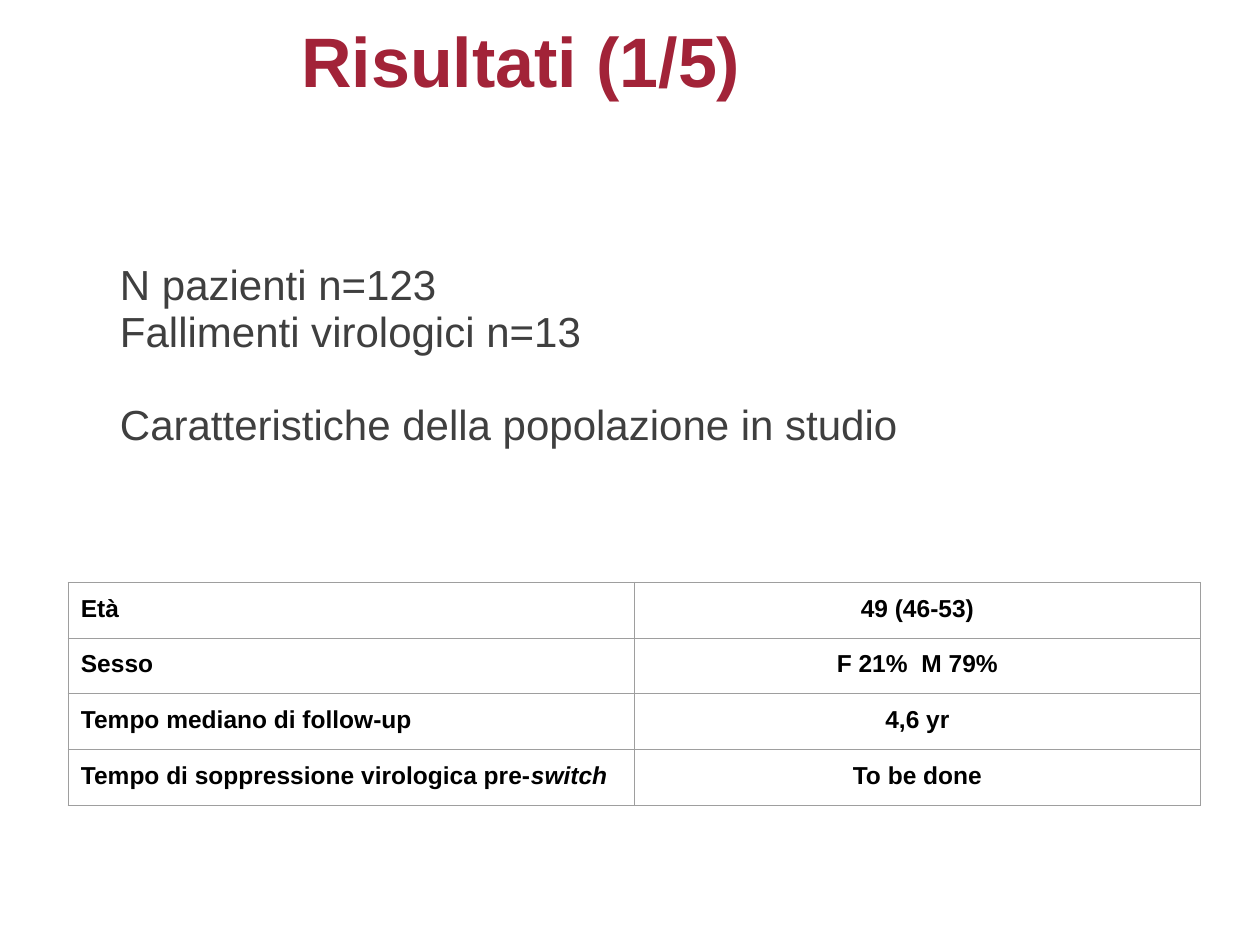
from lxml import etree
from pptx import Presentation
from pptx import util as u
from pptx.dml.color import RGBColor
from pptx.enum import text as t
from pptx.oxml import ns

CRIMSON = RGBColor(0xA2, 0x23, 0x38)
CHARCOAL = RGBColor(0x3F, 0x3F, 0x3F)
BLACK = RGBColor(0x00, 0x00, 0x00)
GREY = RGBColor(0x9E, 0x9E, 0x9E)
FONT = "Arial"
INSET = u.Pt(7.2)


def write(para, text, size=14, color=BLACK, bold=False, italic=False):
    """Add one formatted span of text to a paragraph."""
    span = para.add_run()
    span.text = text
    font = span.font
    font.name, font.size = FONT, u.Pt(size)
    font.bold, font.italic = bold, italic
    font.color.rgb = color


class SlideBuilder:
    """Holds the current slide and the style of its elements."""

    def __init__(self, page):
        self.page = page

    def place(self, box, left, top, width, height):
        box.left, box.top = u.Pt(left), u.Pt(top)
        box.width, box.height = u.Pt(width), u.Pt(height)
        frame = box.text_frame
        frame.word_wrap = True
        frame.auto_size = t.MSO_AUTO_SIZE.NONE
        frame.vertical_anchor = t.MSO_ANCHOR.TOP
        frame.margin_left = frame.margin_right = INSET
        frame.margin_top = frame.margin_bottom = INSET
        return frame

    def title(self, text, *area):
        para = self.place(self.page.shapes.title, *area).paragraphs[0]
        para.alignment = t.PP_ALIGN.LEFT
        para.line_spacing = 0.9
        write(para, text, size=40, color=CRIMSON, bold=True)

    def body(self, lines, *area):
        """Lines are pairs of text and space before in points."""
        box = self.page.shapes.add_textbox(0, 0, 0, 0)
        frame = self.place(box, *area)
        for index, (text, gap) in enumerate(lines):
            para = frame.add_paragraph() if index else frame.paragraphs[0]
            properties = para._p.get_or_add_pPr()
            properties.set("marL", str(u.Pt(18)))
            properties.set("indent", str(u.Pt(-6)))
            para.line_spacing = 0.9
            para.space_before = u.Pt(gap)
            write(para, text, size=24, color=CHARCOAL)

    def border(self, cell):
        properties = cell._tc.get_or_add_tcPr()
        for index, side in enumerate(("lnL", "lnR", "lnT", "lnB")):
            line = etree.Element(ns.qn(f"a:{side}"), w=str(u.Pt(0.75)))
            fill = etree.SubElement(line, ns.qn("a:solidFill"))
            etree.SubElement(fill, ns.qn("a:srgbClr"), val=str(GREY))
            properties.insert(index, line)

    def table(self, rows, left, top, width, height):
        """Each row is a label, its italic ending and a value."""
        table = self.page.shapes.add_table(
            len(rows), 2, u.Pt(left), u.Pt(top), u.Pt(width), u.Pt(height)
        ).table
        table.first_row = table.horz_banding = False
        for row, (label, ending, value) in enumerate(rows):
            name_cell, value_cell = table.cell(row, 0), table.cell(row, 1)
            for cell in (name_cell, value_cell):
                cell.fill.background()
                cell.margin_left = cell.margin_right = INSET
                cell.margin_top = cell.margin_bottom = INSET
                self.border(cell)
            para = name_cell.text_frame.paragraphs[0]
            write(para, label, bold=True)
            if ending:
                write(para, ending, bold=True, italic=True)
            para = value_cell.text_frame.paragraphs[0]
            para.alignment = t.PP_ALIGN.CENTER
            write(para, value, bold=True)


def main():
    deck = Presentation()
    deck.slide_width, deck.slide_height = u.Pt(720), u.Pt(540)
    builder = SlideBuilder(deck.slides.add_slide(deck.slide_layouts[5]))

    # Heading
    builder.title("Risultati (1/5)", 165, 8, 506, 121.5)

    # Patient counts, then the caption of the table
    builder.body(
        [
            ("N pazienti n=123", 0),
            ("Fallimenti virologici n=13", 1),
            ("Caratteristiche della popolazione in studio", 27),
        ],
        49.5, 144, 621, 301,
    )

    # Population characteristics
    builder.table(
        [
            ("Età", "", "49 (46-53)"),
            ("Sesso", "", "F 21%  M 79%"),
            ("Tempo mediano di follow-up", "", "4,6 yr"),
            ("Tempo di soppressione virologica pre-", "switch", "To be done"),
        ],
        39, 332.75, 647, 127.5,
    )

    deck.save("out.pptx")


if __name__ == "__main__":
    main()
